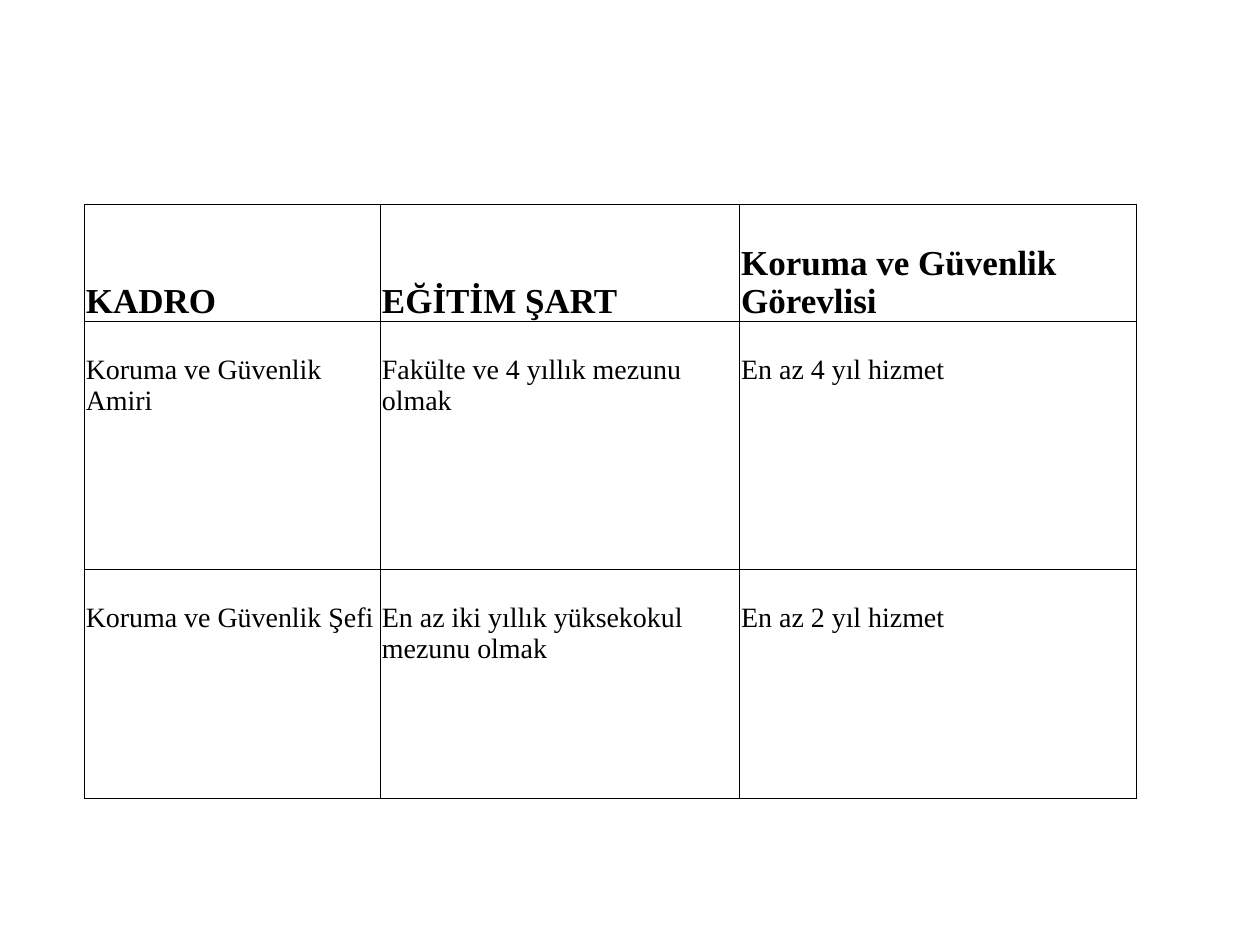
from dataclasses import dataclass

from lxml.etree import SubElement
from pptx import Presentation
from pptx.dml.color import RGBColor
from pptx.enum.text import MSO_ANCHOR
from pptx.oxml.ns import qn
from pptx.table import Table, _Cell
from pptx.util import Cm, Length, Pt


@dataclass(frozen=True)
class Theme:
    font: str = "Times New Roman"
    ink: str = "000000"
    header_size: Length = Pt(20)
    body_size: Length = Pt(16)
    thin: Length = Pt(0.5)
    thick: Length = Pt(1)
    no_line: Length = Pt(0)
    padding: Length = Cm(0.03)
    body_top: Length = Cm(0.67)


@dataclass(frozen=True)
class Borders:
    left: Length
    right: Length
    top: Length
    bottom: Length


THEME = Theme()
HEADERS = ("KADRO", "EĞİTİM ŞART", "Koruma ve Güvenlik Görevlisi")
STAFF_ROWS = (
    ("Koruma ve Güvenlik Amiri", "Fakülte ve 4 yıllık mezunu olmak", "En az 4 yıl hizmet"),
    ("Koruma ve Güvenlik Şefi", "En az iki yıllık yüksekokul mezunu olmak", "En az 2 yıl hizmet"),
)
COLUMN_WIDTHS = (Cm(5.97), Cm(7.24), Cm(8))
ROW_HEIGHTS = (Cm(2.36), Cm(5), Cm(2.26), Cm(2.36))
SERVICE_COLUMN = 2


def draw_borders(cell: _Cell, borders: Borders) -> None:
    properties = cell._tc.get_or_add_tcPr()
    edges = (("L", borders.left), ("R", borders.right), ("T", borders.top), ("B", borders.bottom))
    for edge, width in edges:
        line = SubElement(properties, qn(f"a:ln{edge}"), w=str(int(width)))
        if width == THEME.no_line:
            SubElement(line, qn("a:noFill"))
        else:
            fill = SubElement(line, qn("a:solidFill"))
            SubElement(fill, qn("a:srgbClr"), val=THEME.ink)


def borders_at(row: int, column: int) -> Borders:
    """Thin lines around the header, thick ones below, none inside the last service entry."""
    thin, thick = THEME.thin, THEME.thick
    in_service = column == SERVICE_COLUMN
    if row == 0:
        return Borders(thin, thin, thin, thick if in_service else thin)
    top = thin if row == 1 and not in_service else thick
    bottom = thick
    if in_service and row == 2:
        bottom = THEME.no_line
    if in_service and row == 3:
        top = THEME.no_line
    return Borders(thick, thick, top, bottom)


def write_cell(cell: _Cell, text: str, is_header: bool) -> None:
    cell.vertical_anchor = MSO_ANCHOR.BOTTOM if is_header else MSO_ANCHOR.TOP
    cell.margin_left = cell.margin_right = THEME.padding
    cell.margin_top = THEME.padding if is_header else THEME.body_top
    cell.margin_bottom = 0
    run = cell.text_frame.paragraphs[0].add_run()
    run.text = text
    run.font.name = THEME.font
    run.font.size = THEME.header_size if is_header else THEME.body_size
    run.font.bold = is_header
    run.font.color.rgb = RGBColor.from_string(THEME.ink)


def format_grid(table: Table) -> None:
    table.first_row = table.horz_banding = False
    for column, width in zip(table.columns, COLUMN_WIDTHS):
        column.width = width
    for row, height in zip(table.rows, ROW_HEIGHTS):
        row.height = height
    for row in range(len(ROW_HEIGHTS)):
        for column in range(len(COLUMN_WIDTHS)):
            cell = table.cell(row, column)
            draw_borders(cell, borders_at(row, column))
            cell.fill.background()
    for column in range(SERVICE_COLUMN):
        table.cell(2, column).merge(table.cell(3, column))


def main() -> None:
    presentation = Presentation()
    presentation.slide_width, presentation.slide_height = Cm(25.4), Cm(19.05)
    slide = presentation.slides.add_slide(presentation.slide_layouts[6])
    table = slide.shapes.add_table(
        len(ROW_HEIGHTS), len(COLUMN_WIDTHS),
        Cm(1.7), Cm(4.12), sum(COLUMN_WIDTHS), sum(ROW_HEIGHTS),
    ).table
    format_grid(table)
    for row, texts in enumerate((HEADERS, *STAFF_ROWS)):
        for column, text in enumerate(texts):
            write_cell(table.cell(row, column), text, is_header=row == 0)
    presentation.save("out.pptx")


if __name__ == "__main__":
    main()
